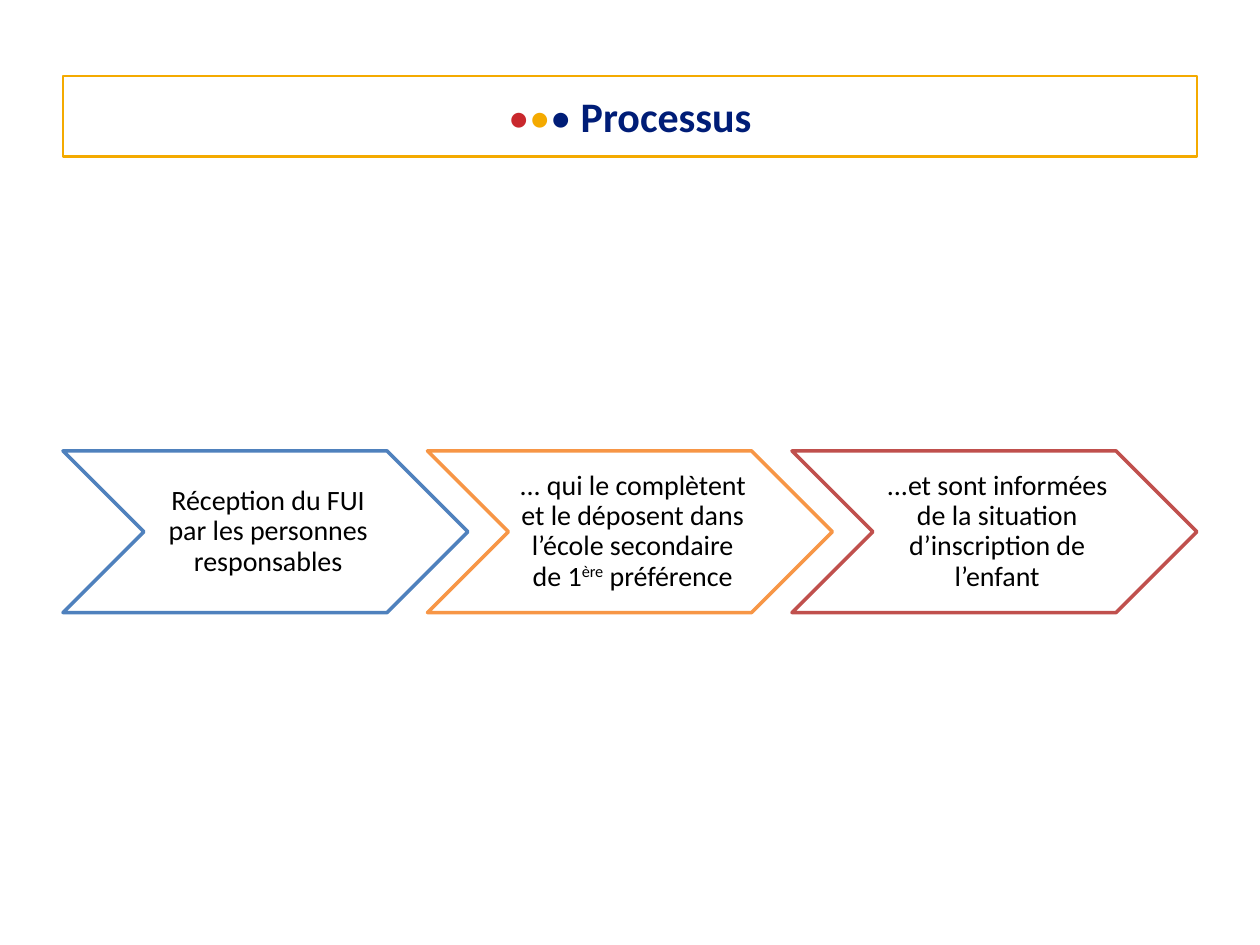
from pptx import Presentation
from pptx import util as u
from pptx.dml import color as col
from pptx.enum import shapes, text

HUES = {
    "red": "C9282D", "gold": "F4AA00", "navy": "001D77",
    "white": "FFFFFF", "black": "000000",
    "blue": "4F81BD", "orange": "F79646", "brick": "C0504D",
}
STEPS = [
    ("blue", [("Réception du FUI par les personnes responsables", 0)]),
    ("orange", [("... qui le complètent et le déposent dans l’école secondaire de 1", 0),
                ("ère", 30), (" préférence", 0)]),
    ("brick", [("...et sont informées de la situation d’inscription de l’enfant", 0)]),
]


def hue(name):
    return col.RGBColor.from_string(HUES[name])


def write(para, words, size=16, color="black", bold=False, base=0):
    run = para.add_run()
    run.text = words
    font = run.font
    font.name, font.size, font.bold = "Calibri", u.Pt(size), bold
    font.color.rgb = hue(color)
    if base:
        run._r.get_or_add_rPr().set("baseline", str(base * 1000))


def edge(shape, color, width):
    shape.line.color.rgb = hue(color)
    shape.line.width = u.Pt(width)


def center(frame):
    frame.word_wrap = True
    frame.auto_size = text.MSO_AUTO_SIZE.NONE
    frame.vertical_anchor = text.MSO_ANCHOR.MIDDLE
    para = frame.paragraphs[0]
    para.alignment = text.PP_ALIGN.CENTER
    return para


def head(slide, left, top, width, height):
    title = slide.shapes.title
    title.left, title.top, title.width, title.height = map(u.Cm, (left, top, width, height))
    edge(title, "gold", 1.5)
    para = center(title.text_frame)
    for words, color in (("•", "red"), ("•", "gold"), ("• ", "navy")):
        write(para, words, size=24, color=color)
    write(para, "Processus", size=24, color="navy", bold=True)


def step(slide, left, top, width, height, color, parts):
    arrow = slide.shapes.add_shape(
        shapes.MSO_SHAPE.CHEVRON, *map(u.Cm, (left, top, width, height)))
    arrow.shadow.inherit = False
    arrow.fill.solid()
    arrow.fill.fore_color.rgb = hue("white")
    edge(arrow, color, 2)
    frame = arrow.text_frame
    frame.margin_left = u.Cm(0.17)
    frame.margin_top = frame.margin_right = frame.margin_bottom = u.Cm(0.06)
    para = center(frame)
    para.line_spacing = 0.9
    for words, base in parts:
        write(para, words, base=base)


def flow(slide, left, top, width, height):
    lap = 0.1
    count = len(STEPS)
    size = width / (count - lap * (count - 1))
    for i, (color, parts) in enumerate(STEPS):
        step(slide, left + i * size * (1 - lap), top, size, height, color, parts)


def main():
    deck = Presentation()
    deck.slide_width, deck.slide_height = u.Cm(25.4), u.Cm(19.05)
    slide = deck.slides.add_slide(deck.slide_layouts[5])
    head(slide, 1.27, 1.53, 22.86, 1.62)
    flow(slide, 1.27, 9.09, 22.86, 3.26)
    deck.save("out.pptx")


if __name__ == "__main__":
    main()
